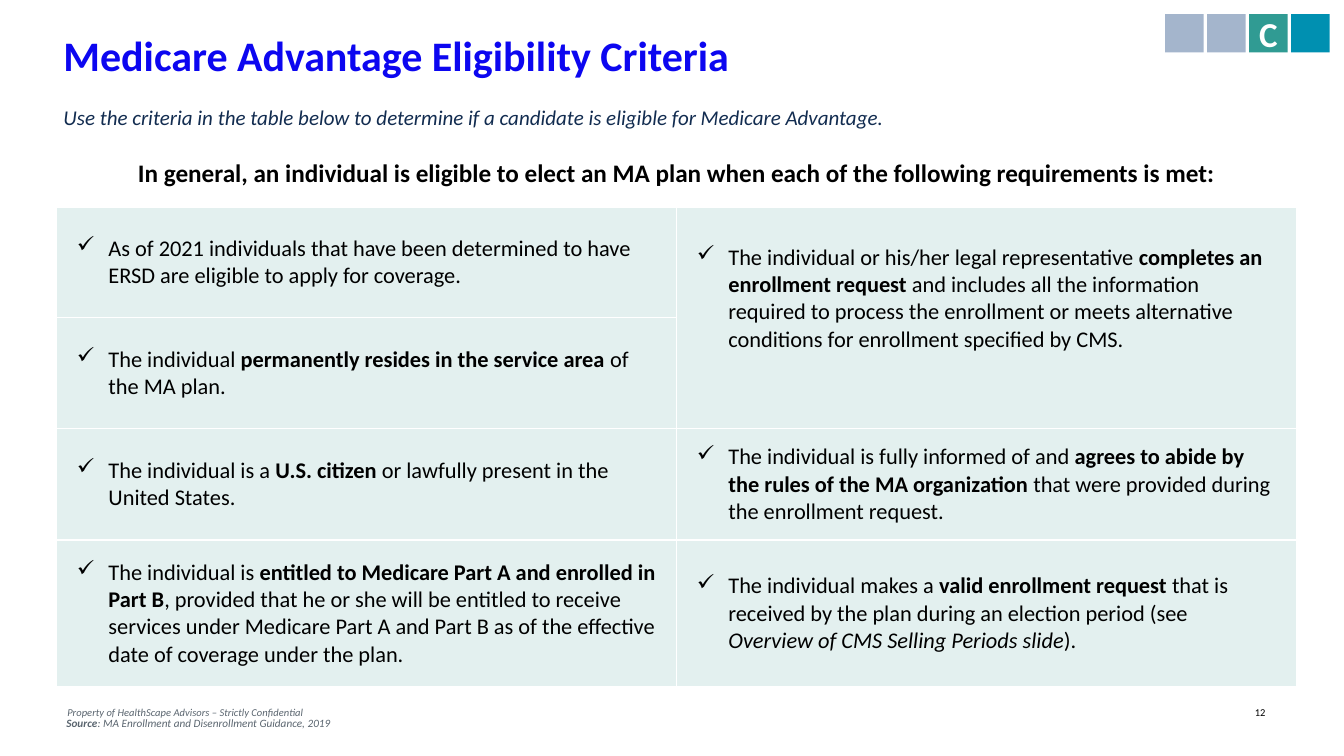
from lxml.etree import SubElement
from pptx import Presentation
from pptx.dml.color import RGBColor
from pptx.enum.shapes import MSO_SHAPE as Shape
from pptx.enum.text import MSO_ANCHOR as Anchor, PP_ALIGN as Align
from pptx.oxml.ns import qn
from pptx.util import Pt

COLORS = {
    "title": "0C06F0", "subtitle": "122C50", "footer": "5A656F",
    "black": "000000", "white": "FFFFFF", "cell": "E3F0EF",
    "inactive": "A4B5CC", "current": "309B93", "last": "0090B1",
}


def set_font(paragraph, size, color, bold=False, italic=False):
    font = paragraph.font
    font.name, font.size = "Calibri", Pt(size)
    font.bold, font.italic = bold, italic
    font.color.rgb = RGBColor.from_string(COLORS[color])


def set_borders(cell, bottom_width):
    properties = cell._tc.get_or_add_tcPr()
    for index, side in enumerate(("lnL", "lnR", "lnT", "lnB")):
        width = bottom_width if side == "lnB" else 1
        line = SubElement(properties, qn(f"a:{side}"), w=str(Pt(width)))
        fill = SubElement(line, qn("a:solidFill"))
        SubElement(fill, qn("a:srgbClr"), val=COLORS["white"])
        properties.insert(index, line)


presentation = Presentation()
presentation.slide_width, presentation.slide_height = Pt(960), Pt(540)
slide = presentation.slides.add_slide(presentation.slide_layouts[1])

# Title and subtitle
headings = [
    (slide.shapes.title, "Medicare Advantage Eligibility Criteria", 24.5, 49, 30, "title", True),
    (slide.placeholders[1],
     "Use the criteria in the table below to determine if a candidate is eligible for Medicare Advantage.",
     59.8, 58.3, 15, "subtitle", False),
]
for shape, text, top, height, size, color, is_title in headings:
    shape.left, shape.top, shape.width, shape.height = Pt(33.8), Pt(top), Pt(892), Pt(height)
    frame = shape.text_frame
    frame.text = text
    frame.vertical_anchor = Anchor.TOP
    frame.margin_left = frame.margin_right = Pt(11.5)
    frame.margin_top = frame.margin_bottom = Pt(5.8)
    paragraph = frame.paragraphs[0]
    paragraph.alignment = Align.LEFT
    paragraph.line_spacing = Pt(26.7)
    paragraph.space_before, paragraph.space_after = Pt(0), Pt(8)
    properties = paragraph._p.get_or_add_pPr()
    properties.set("marL", "0")
    properties.set("indent", "0")
    SubElement(properties, qn("a:buNone"))
    set_font(paragraph, size, color, bold=is_title, italic=not is_title)

# Eligibility table: each criterion is a list of (text, style) runs
criteria = {
    (1, 0): [("As of 2021 individuals that have been determined to have ERSD are eligible to apply for coverage.", "")],
    (1, 1): [("The individual or his/her legal representative ", ""),
             ("completes an enrollment request ", "bold"),
             ("and includes all the information required to process the enrollment or meets "
              "alternative conditions for enrollment specified by CMS.", "")],
    (2, 0): [("The individual ", ""), ("permanently resides in the service area ", "bold"),
             ("of the MA plan.", "")],
    (3, 0): [("The individual is a ", ""), ("U.S. citizen ", "bold"),
             ("or lawfully present in the United States.", "")],
    (3, 1): [("The individual is fully informed of and ", ""),
             ("agrees to abide by the rules of the MA organization", "bold"),
             (" that were provided during the enrollment request.", "")],
    (4, 0): [("The individual is ", ""),
             ("entitled to Medicare Part A and enrolled in Part B", "bold"),
             (", provided that he or she will be entitled to receive services under Medicare "
              "Part A and Part B as of the effective date of coverage under the plan.", "")],
    (4, 1): [("The individual makes a ", ""), ("valid enrollment request ", "bold"),
             ("that is received by the plan during an election period (see ", ""),
             ("Overview of CMS Selling Periods slide", "italic"), (").", "")],
}
row_heights = [46, 79.4, 79.4, 79.4, 105]
table = slide.shapes.add_table(5, 2, Pt(40.6), Pt(101.5), Pt(885.6), Pt(sum(row_heights))).table
for row, height in zip(table.rows, row_heights):
    row.height = Pt(height)
for column in table.columns:
    column.width = Pt(442.8)
table.cell(0, 0).merge(table.cell(0, 1))
table.cell(1, 1).merge(table.cell(2, 1))

for row_index in range(5):
    for column_index in range(2):
        cell = table.cell(row_index, column_index)
        cell.fill.solid()
        cell.fill.fore_color.rgb = RGBColor.from_string(COLORS["cell" if row_index else "white"])
        cell.vertical_anchor = Anchor.MIDDLE
        set_borders(cell, 1 if row_index else 3)

header = table.cell(0, 0)
header.text = "In general, an individual is eligible to elect an MA plan when each of the following requirements is met:"
header_paragraph = header.text_frame.paragraphs[0]
header_paragraph.alignment = Align.CENTER
set_font(header_paragraph, 18, "black", bold=True)

for position, runs in criteria.items():
    cell = table.cell(*position)
    cell.margin_left = cell.margin_right = Pt(14.4)
    cell.margin_top = cell.margin_bottom = Pt(7.2)
    paragraph = cell.text_frame.paragraphs[0]
    properties = paragraph._p.get_or_add_pPr()
    properties.set("marL", str(Pt(22.5)))
    properties.set("indent", str(-Pt(22.5)))
    SubElement(properties, qn("a:buChar"), char="✓")
    set_font(paragraph, 16, "black")
    for text, style in runs:
        run = paragraph.add_run()
        run.text = text
        if style:
            setattr(run.font, style, True)

# The two-row criterion starts one line below the top of its cell
tall_cell = table.cell(1, 1)
tall_cell.vertical_anchor = Anchor.TOP
tall_cell.margin_top = Pt(26.7)

# Footer, page number and source
footers = [
    ([("Property of HealthScape Advisors – Strictly Confidential", False)], 41, 500.4, 424, 7.5, "footer", True),
    ([("12", False)], 889.2, 500.4, 41.8, 7.5, "black", False),
    ([("Source", True), (": MA Enrollment and Disenrollment Guidance, 2019", False)],
     40.3, 508.3, 690.5, 8, "footer", True),
]
for runs, left, top, width, size, color, italic in footers:
    frame = slide.shapes.add_textbox(Pt(left), Pt(top), Pt(width), Pt(16.8)).text_frame
    frame.word_wrap = True
    paragraph = frame.paragraphs[0]
    set_font(paragraph, size, color, italic=italic)
    for text, bold in runs:
        run = paragraph.add_run()
        run.text = text
        if bold:
            run.font.bold = True

# Section tracker
for index, (color, letter) in enumerate(
        [("inactive", ""), ("inactive", ""), ("current", "C"), ("last", "")]):
    square = slide.shapes.add_shape(Shape.RECTANGLE, Pt(832.3 + 30 * index), Pt(10.1), Pt(27.4), Pt(27.4))
    square.shadow.inherit = False
    square.fill.solid()
    square.fill.fore_color.rgb = RGBColor.from_string(COLORS[color])
    square.line.fill.background()
    if letter:
        frame = square.text_frame
        frame.text = letter
        frame.vertical_anchor = Anchor.MIDDLE
        frame.margin_left = frame.margin_right = 0
        frame.paragraphs[0].alignment = Align.CENTER
        set_font(frame.paragraphs[0], 25, "white", bold=True)

presentation.save("out.pptx")
